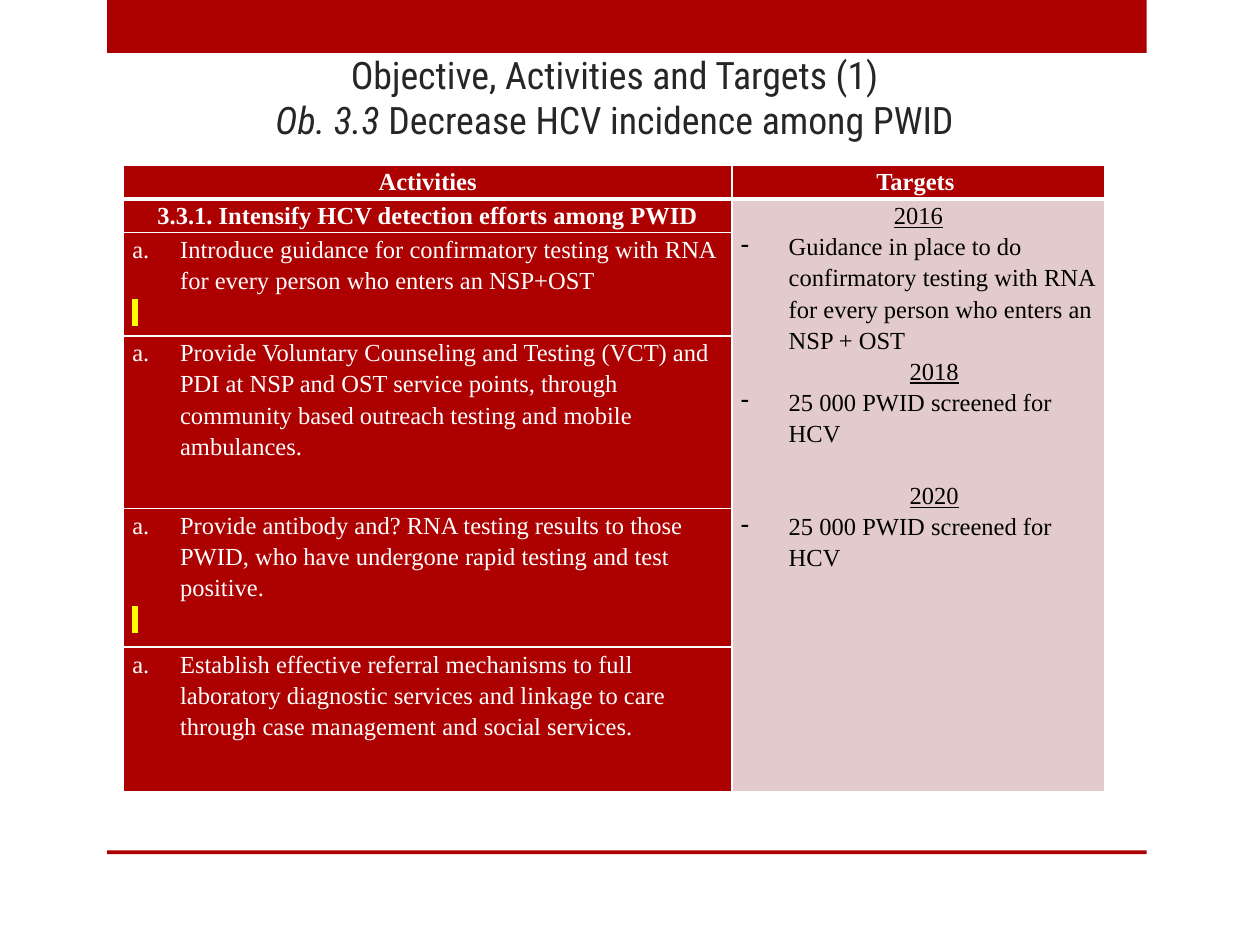
from lxml import etree
from pptx import Presentation
from pptx.dml.color import RGBColor
from pptx.enum.shapes import MSO_SHAPE
from pptx.enum.text import MSO_ANCHOR, PP_ALIGN
from pptx.oxml.ns import qn
from pptx.util import Inches, Pt

RECT = MSO_SHAPE.RECTANGLE
BOTTOM = MSO_ANCHOR.BOTTOM
CENTER, LEFT, JUSTIFY = PP_ALIGN.CENTER, PP_ALIGN.LEFT, PP_ALIGN.JUSTIFY
RED, PINK, WHITE, BLACK, YELLOW = "AD0101", "E3CBCB", "FFFFFF", "000000", "FFFF00"
HEADER = {"bold": True, "color": WHITE, "align": CENTER}
LETTER = {"color": WHITE, "align": LEFT, "indent": (0.38, -0.38),
          "bullet": ("a:buAutoNum", "type", "alphaLcPeriod")}
MARK = {"color": WHITE, "align": JUSTIFY, "indent": (0.19, -0.19), "highlight": YELLOW}
DASH = {"color": BLACK, "align": LEFT, "indent": (0.38, -0.38),
        "bullet": ("a:buChar", "char", "-")}
YEAR = {"color": BLACK, "align": CENTER, "underline": True}
LATER_YEAR = {**YEAR, "indent": (0.25, 0)}


def rgb(color):
    return RGBColor.from_string(color)


def fill_cell(cell, color, paragraphs):
    """Set margins, fill and (text, format) paragraphs of a table cell."""
    cell.margin_left = cell.margin_right = Inches(0.07)
    cell.margin_top = cell.margin_bottom = 0
    cell.fill.solid()
    cell.fill.fore_color.rgb = rgb(color)
    tf = cell.text_frame
    for i, (text, fmt) in enumerate(paragraphs):
        p = tf.add_paragraph() if i else tf.paragraphs[0]
        p.alignment = fmt["align"]
        p.line_spacing = 1.15
        p.space_before = Pt(fmt.get("before", 0))
        pPr = p._p.get_or_add_pPr()
        for name, value in zip(("marL", "indent"), fmt.get("indent", (0, 0))):
            pPr.set(name, str(Inches(value)))
        if "bullet" in fmt:
            tag, name, value = fmt["bullet"]
            etree.SubElement(pPr, qn(tag)).set(name, value)
        r = p.add_run()
        r.text = text
        r.font.name = "Times New Roman"
        r.font.size = Pt(14)
        r.font.bold = fmt.get("bold", False)
        r.font.underline = fmt.get("underline", False)
        r.font.color.rgb = rgb(fmt["color"])
        if "highlight" in fmt:
            mark = etree.Element(qn("a:highlight"))
            etree.SubElement(mark, qn("a:srgbClr")).set("val", fmt["highlight"])
            r._r.rPr.find(qn("a:latin")).addprevious(mark)


prs = Presentation()
prs.slide_width, prs.slide_height = Inches(10), Inches(7.5)
s = prs.slides.add_slide(prs.slide_layouts[6])

# Top band and bottom rule
for top, height in ((0, 0.42), (6.75, 0.03)):
    sp = s.shapes.add_shape(RECT, Inches(0.85), Inches(top), Inches(8.25), Inches(height))
    sp.shadow.inherit = False
    sp.fill.solid()
    sp.fill.fore_color.rgb = rgb(RED)
    sp.line.fill.background()

# Title
sp = s.shapes.add_textbox(Inches(0.98), Inches(0.6), Inches(7.8), Inches(0.94))
tf = sp.text_frame
tf.word_wrap = True
tf.vertical_anchor = BOTTOM
tf.margin_bottom = Inches(0.41)
p = tf.paragraphs[0]
p.alignment = CENTER
for text, italic in (("Objective, Activities and Targets (1)", False),
                     ("Ob. 3.3 ", True),
                     ("Decrease HCV incidence among PWID", False)):
    if italic:
        p.add_line_break()
    r = p.add_run()
    r.text = text
    r.font.name = "Roboto Condensed"
    r.font.size = Pt(21.6)
    r.font.italic = italic
    r.font.color.rgb = rgb("262626")

# Table of activities and targets
activities = [
    [("Activities", HEADER)],
    [("3.3.1. Intensify HCV detection efforts among PWID", HEADER)],
    [("Introduce guidance for confirmatory testing with RNA for every person "
      "who enters an NSP+OST", LETTER), (" ", MARK)],
    [("Provide Voluntary Counseling and Testing (VCT) and PDI at NSP and OST "
      "service points, through community based outreach testing and mobile "
      "ambulances.", LETTER)],
    [("Provide antibody and? RNA testing results to those PWID, who have "
      "undergone rapid testing and test positive.", LETTER), (" ", MARK)],
    [("Establish effective referral mechanisms to full laboratory diagnostic "
      "services and linkage to care through case management and social "
      "services.", LETTER)],
]
targets = [
    ("2016", YEAR),
    ("Guidance in place to do confirmatory testing with RNA for every person "
     "who enters an NSP + OST", DASH),
    ("2018", LATER_YEAR),
    ("25 000 PWID screened for HCV", DASH),
    ("2020", {**LATER_YEAR, "before": 17.7}),
    ("25 000 PWID screened for HCV", DASH),
]
row_heights = (0.26, 0.26, 0.82, 1.37, 1.1, 1.15)
table = s.shapes.add_table(len(row_heights), 2, Inches(0.98), Inches(1.31),
                           Inches(7.79), Inches(sum(row_heights))).table
for column, width in zip(table.columns, (4.83, 2.96)):
    column.width = Inches(width)
for i, (row, height) in enumerate(zip(table.rows, row_heights)):
    row.height = Inches(height)
    for cell in row.cells:
        tcPr = cell._tc.get_or_add_tcPr()
        for side in ("L", "R", "T", "B"):
            thick = (i, side) in ((0, "B"), (1, "T"))
            ln = etree.SubElement(tcPr, qn(f"a:ln{side}"), w=str(Pt(3 if thick else 1)))
            line_fill = etree.SubElement(ln, qn("a:solidFill"))
            etree.SubElement(line_fill, qn("a:srgbClr")).set("val", WHITE)

table.cell(1, 1).merge(table.cell(len(row_heights) - 1, 1))
for i, paragraphs in enumerate(activities):
    fill_cell(table.cell(i, 0), RED, paragraphs)
fill_cell(table.cell(0, 1), RED, [("Targets ", HEADER)])
fill_cell(table.cell(1, 1), PINK, targets)

prs.save("out.pptx")
